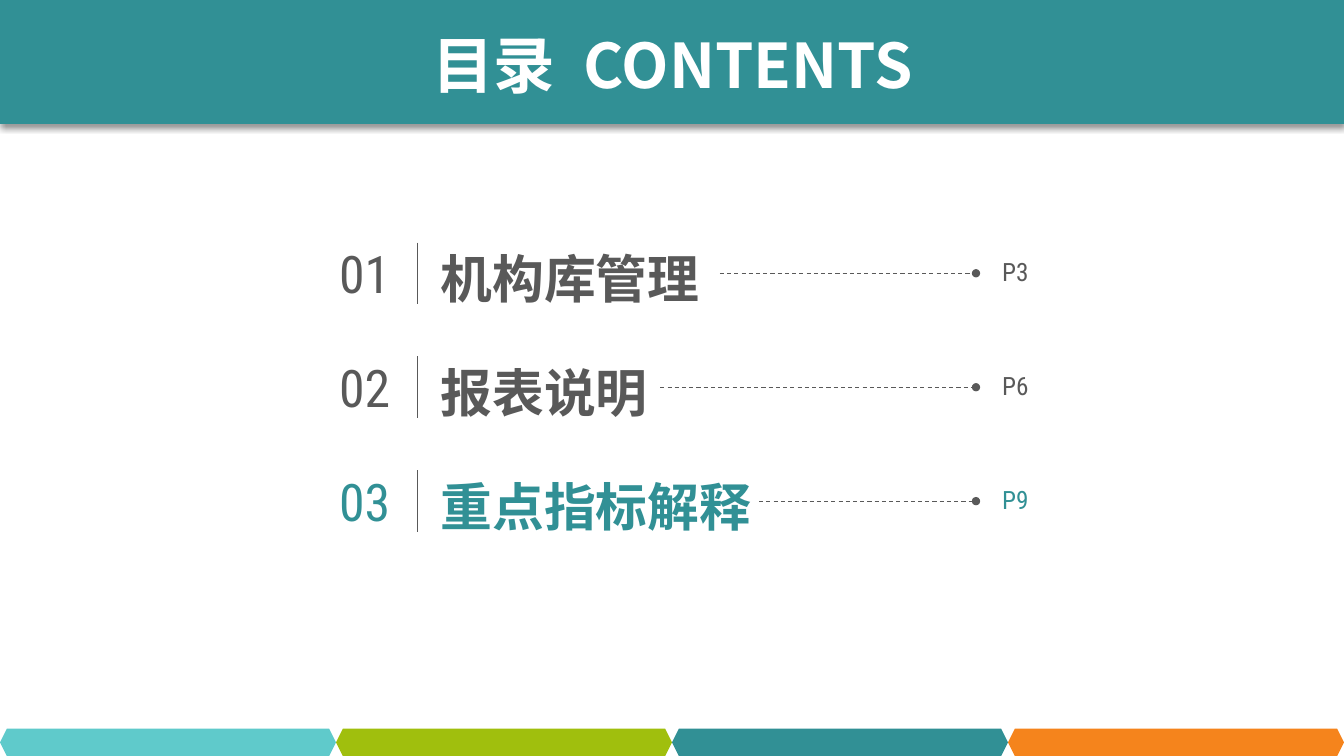
from dataclasses import dataclass

from lxml.etree import SubElement
from pptx import Presentation
from pptx.dml.color import RGBColor
from pptx.enum.dml import MSO_LINE_DASH_STYLE as Dash
from pptx.enum.shapes import MSO_CONNECTOR as Connector, MSO_SHAPE as Shape
from pptx.enum.text import MSO_ANCHOR as Anchor, MSO_AUTO_SIZE as AutoSize, PP_ALIGN as Align
from pptx.oxml import parse_xml
from pptx.oxml.ns import nsdecls, qn
from pptx.util import Inches, Pt

WIDTH, HEIGHT = Inches(13.33), Inches(7.5)


@dataclass(frozen=True)
class Theme:
    teal: str = "319095"
    aqua: str = "5FCACB"
    lime: str = "A0BF0D"
    orange: str = "F5841C"
    grey: str = "595959"
    white: str = "FFFFFF"
    heading_font: str = "Noto Sans CJK SC"
    number_font: str = "Roboto Condensed"
    title_size: float = 44
    entry_size: float = 37
    page_size: float = 18
    rule_width: float = 0.75


@dataclass(frozen=True)
class Entry:
    number: str
    name: str
    page: str
    leader_start: float
    color: str


THEME = Theme()
ENTRIES = [
    Entry("01", "机构库管理", "P3", 53.56, THEME.grey),
    Entry("02", "报表说明", "P6", 49.13, THEME.grey),
    Entry("03", "重点指标解释", "P9", 56.48, THEME.teal),
]
STRIPE_COLORS = [THEME.aqua, THEME.lime, THEME.teal, THEME.orange]
FIRST_ROW, ROW_PITCH = 36.15, 15.07


def col(count: float) -> int:
    """Return the length of a number of columns, 100 to the slide."""
    return round(WIDTH * count / 100)


def row(count: float) -> int:
    """Return the length of a number of rows, 100 to the slide."""
    return round(HEIGHT * count / 100)


def place(shape, left: float, top: float, width: float, height: float):
    """Put a shape on the grid and return it."""
    shape.left, shape.top = col(left), row(top)
    shape.width, shape.height = col(width), row(height)
    return shape


def prepare(frame, *, anchor=Anchor.MIDDLE, wrap: bool = True) -> None:
    """Clear the margins of a text frame and set its layout."""
    frame.auto_size = AutoSize.NONE
    frame.word_wrap = wrap
    frame.vertical_anchor = anchor
    frame.margin_left = frame.margin_right = frame.margin_top = frame.margin_bottom = 0


def write(paragraph, words: str, *, size: float, color: str, font: str,
          bold: bool = False, align=Align.LEFT, tracking: float = 0) -> None:
    """Append formatted words to a paragraph."""
    run = paragraph.add_run()
    run.text = words
    run.font.size, run.font.bold, run.font.name = Pt(size), bold, font
    run.font.color.rgb = RGBColor.from_string(color)
    properties = run.font._element
    SubElement(properties, qn("a:ea")).set("typeface", font)
    if tracking:
        properties.set("spc", str(round(tracking * 100)))
    paragraph.alignment = align


def draw_label(slide, words: str, left: float, center: float, width: float, height: float,
               *, size: float, color: str) -> None:
    """Draw a centred number in its own text box."""
    label = place(slide.shapes.add_textbox(0, 0, 0, 0), left, center - height / 2, width, height)
    prepare(label.text_frame)
    write(label.text_frame.paragraphs[0], words, size=size, color=color,
          font=THEME.number_font, align=Align.CENTER)


def draw_rule(slide, start: tuple[float, float], end: tuple[float, float],
              *, leader: bool = False) -> None:
    """Draw a thin rule, dashed and ending in a dot for a leader."""
    rule = slide.shapes.add_connector(
        Connector.STRAIGHT, col(start[0]), row(start[1]), col(end[0]), row(end[1]))
    rule.line.color.rgb = RGBColor.from_string(THEME.grey)
    rule.line.width = Pt(THEME.rule_width)
    if leader:
        rule.line.dash_style = Dash.DASH
        SubElement(rule.line._get_or_add_ln(), qn("a:tailEnd")).set("type", "oval")
    SubElement(rule._element.spPr, qn("a:effectLst"))


def draw_block(slide, kind, left: float, top: float, width: float, height: float, color: str):
    """Draw a plain filled shape and return it."""
    block = place(slide.shapes.add_shape(kind, 0, 0, 0, 0), left, top, width, height)
    block.shadow.inherit = False
    block.fill.solid()
    block.fill.fore_color.rgb = RGBColor.from_string(color)
    block.line.fill.background()
    return block


def draw_header(slide) -> None:
    """Draw the shadowed band with the title on it."""
    band = draw_block(slide, Shape.RECTANGLE, 0, 0, 100, 16.4, THEME.teal)
    band._element.spPr.find(qn("a:effectLst")).append(parse_xml(
        f'<a:outerShdw {nsdecls("a")} blurRad="{Pt(4)}" dist="{Pt(3)}" dir="5400000" '
        'algn="t" rotWithShape="0"><a:srgbClr val="000000"><a:alpha val="40000"/>'
        '</a:srgbClr></a:outerShdw>'))
    title = place(slide.shapes.title, 31, 2.8, 38.1, 11.2)
    band._element.addnext(title._element)
    prepare(title.text_frame, wrap=False)
    for words, tracking in (("目录", 0), (" ", 10), ("CONTENTS", 0)):
        write(title.text_frame.paragraphs[0], words, size=THEME.title_size, color=THEME.white,
              font=THEME.heading_font, bold=True, align=Align.CENTER, tracking=tracking)


def draw_names(slide) -> None:
    """Fill the body placeholder with the entry names, one to a row."""
    names = place(slide.placeholders[1], 32.78, 25.75, 26, ROW_PITCH * len(ENTRIES))
    frame = names.text_frame
    prepare(frame, anchor=Anchor.TOP)
    for index, entry in enumerate(ENTRIES):
        paragraph = frame.add_paragraph() if index else frame.paragraphs[0]
        paragraph.line_spacing = Pt(row(ROW_PITCH) / Pt(1))
        paragraph.space_before = paragraph.space_after = Pt(0)
        properties = paragraph._p.get_or_add_pPr()
        properties.set("marL", "0")
        properties.set("indent", "0")
        SubElement(properties, qn("a:buNone"))
        write(paragraph, entry.name, size=THEME.entry_size, color=entry.color,
              font=THEME.heading_font, bold=True)


def draw_entry(slide, entry: Entry, center: float) -> None:
    """Draw the number, divider, leader and page of an entry."""
    draw_label(slide, entry.number, 23.86, center, 6.53, 10.13,
               size=THEME.entry_size, color=entry.color)
    draw_rule(slide, (31.06, center - 4.07), (31.06, center + 4.07))
    draw_rule(slide, (entry.leader_start, center), (72.62, center), leader=True)
    draw_label(slide, entry.page, 71.94, center - 0.28, 7.2, 5.87,
               size=THEME.page_size, color=entry.color)


def main() -> None:
    """Build the contents slide and save it."""
    deck = Presentation()
    deck.slide_width, deck.slide_height = WIDTH, HEIGHT
    slide = deck.slides.add_slide(deck.slide_layouts[1])
    draw_names(slide)
    for index, entry in enumerate(ENTRIES):
        draw_entry(slide, entry, FIRST_ROW + index * ROW_PITCH)
    draw_header(slide)
    stripe_width = 100 / len(STRIPE_COLORS)
    for index, color in enumerate(STRIPE_COLORS):
        draw_block(slide, Shape.HEXAGON, index * stripe_width, 96.4, stripe_width, 3.6, color)
    deck.save("out.pptx")


if __name__ == "__main__":
    main()
